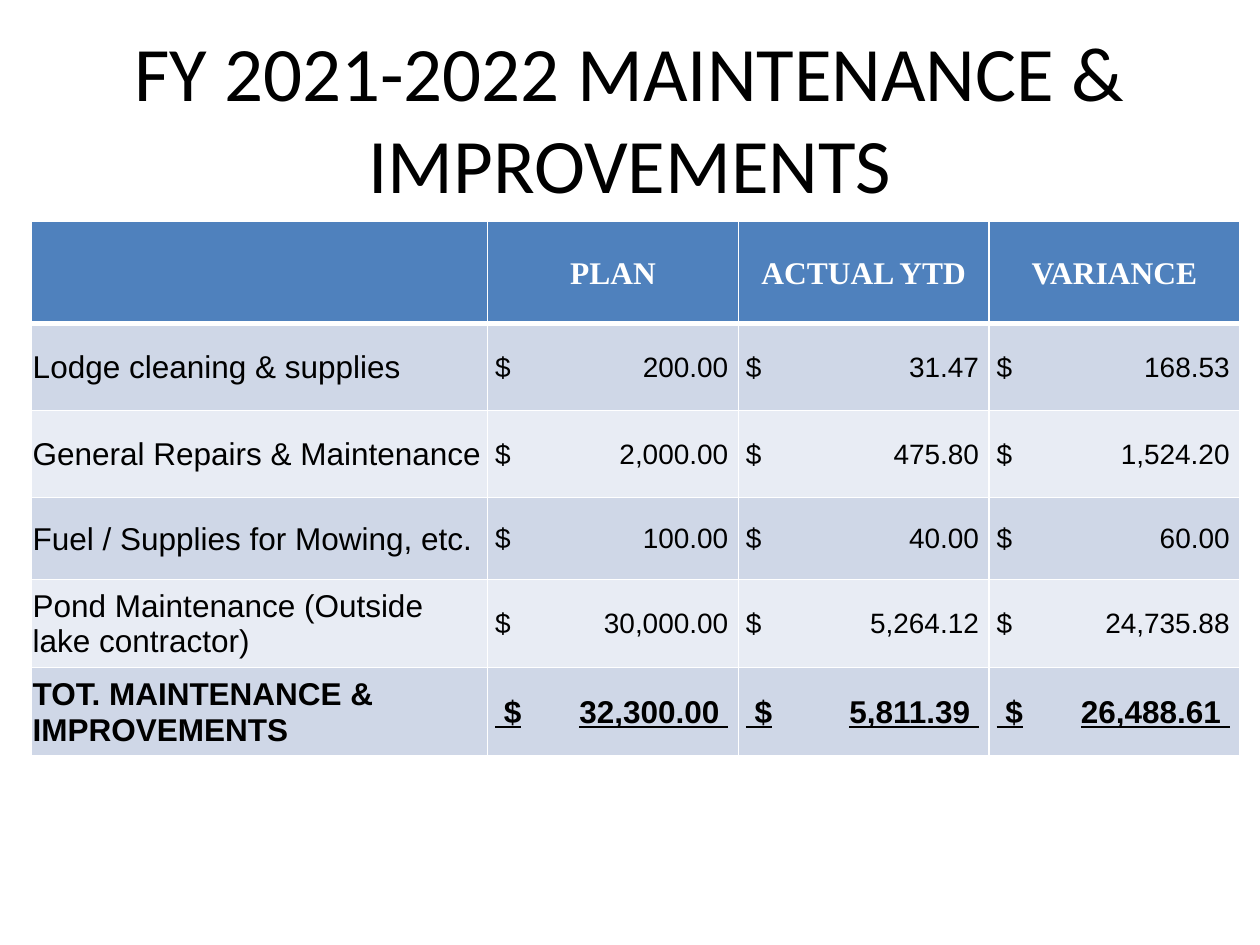
from lxml.etree import SubElement
from pptx import Presentation
from pptx.dml.color import RGBColor
from pptx.enum.text import MSO_ANCHOR, PP_ALIGN
from pptx.oxml.ns import qn
from pptx.util import Inches, Pt

BLACK = RGBColor(0x00, 0x00, 0x00)
WHITE = RGBColor(0xFF, 0xFF, 0xFF)
BLUE = RGBColor(0x4F, 0x81, 0xBD)
DARK = RGBColor(0xCF, 0xD7, 0xE7)
LIGHT = RGBColor(0xE8, 0xEC, 0xF4)

HEADS = ["", "PLAN", "ACTUAL YTD", "VARIANCE"]
COSTS = [
    ("Lodge cleaning & supplies", "200.00", "31.47", "168.53"),
    ("General Repairs & Maintenance", "2,000.00", "475.80", "1,524.20"),
    ("Fuel / Supplies for Mowing, etc.", "100.00", "40.00", "60.00"),
    ("Pond Maintenance (Outside lake contractor)",
     "30,000.00", "5,264.12", "24,735.88"),
    ("TOT. MAINTENANCE & IMPROVEMENTS",
     "32,300.00", "5,811.39", "26,488.61"),
]
WIDTHS = [3.62, 1.99, 1.99, 1.99]
HEIGHTS = [0.81, 0.69, 0.69, 0.65, 0.7, 0.7]
TAB = Inches(1.85)


def write(frame, text, font="Arial", size=18, color=BLACK, bold=False,
          line=False, align=PP_ALIGN.LEFT):
    para = frame.paragraphs[0]
    para.alignment = align
    run = para.add_run()
    run.text = text
    run.font.name = font
    run.font.size = Pt(size)
    run.font.color.rgb = color
    run.font.bold = bold
    run.font.underline = line
    return para


def add_tab(para):
    """Line the amount up at the right of its cell."""
    stops = SubElement(para._p.get_or_add_pPr(), qn("a:tabLst"))
    SubElement(stops, qn("a:tab"), pos=str(TAB), algn="r")


def add_edges(cell, top=1, base=1):
    props = cell._tc.get_or_add_tcPr()
    for side, width in zip("LRTB", (1, 1, top, base)):
        edge = SubElement(props, qn(f"a:ln{side}"), w=str(Pt(width)))
        fill = SubElement(edge, qn("a:solidFill"))
        SubElement(fill, qn("a:srgbClr"), val=str(WHITE))


def style_cell(cell, fill, left=0.01, **edges):
    cell.margin_left = Inches(left)
    cell.margin_right = cell.margin_top = Inches(0.01)
    cell.margin_bottom = 0
    cell.vertical_anchor = MSO_ANCHOR.MIDDLE
    add_edges(cell, **edges)
    cell.fill.solid()
    cell.fill.fore_color.rgb = fill


def add_title(slide, left, top, width, height):
    title = slide.shapes.title
    title.left, title.top = Inches(left), Inches(top)
    title.width, title.height = Inches(width), Inches(height)
    title.text_frame.vertical_anchor = MSO_ANCHOR.MIDDLE
    write(title.text_frame, "FY 2021-2022 MAINTENANCE & IMPROVEMENTS",
          font="Calibri", size=44, align=PP_ALIGN.CENTER)


def add_costs(slide, left, top, width, height):
    table = slide.shapes.add_table(
        len(HEIGHTS), len(WIDTHS), Inches(left), Inches(top),
        Inches(width), Inches(height)).table
    for col, size in zip(table.columns, WIDTHS):
        col.width = Inches(size)
    for row, size in zip(table.rows, HEIGHTS):
        row.height = Inches(size)

    # Header row
    for c, head in enumerate(HEADS):
        cell = table.cell(0, c)
        style_cell(cell, BLUE, base=3)
        if head:
            write(cell.text_frame, head, font="Times New Roman",
                  color=WHITE, bold=True, align=PP_ALIGN.CENTER)

    # Cost rows, the last one being the total
    for r, (label, *sums) in enumerate(COSTS, 1):
        total = r == len(COSTS)
        fill = DARK if r % 2 else LIGHT
        top_edge = 3 if r == 1 else 1
        cell = table.cell(r, 0)
        style_cell(cell, fill, top=top_edge)
        write(cell.text_frame, label, bold=total)
        for c, amount in enumerate(sums, 1):
            cell = table.cell(r, c)
            style_cell(cell, fill, left=0.06, top=top_edge)
            text = f" $\t{amount} " if total else f"$\t{amount}"
            add_tab(write(cell.text_frame, text, size=18 if total else 16,
                          bold=total, line=total))


def main():
    deck = Presentation()
    deck.slide_width, deck.slide_height = Inches(10), Inches(7.5)
    slide = deck.slides.add_slide(deck.slide_layouts[5])
    add_title(slide, 0.5, 0.3, 9, 1.25)
    add_costs(slide, 0.25, 1.76, sum(WIDTHS), sum(HEIGHTS))
    deck.save("out.pptx")


if __name__ == "__main__":
    main()
